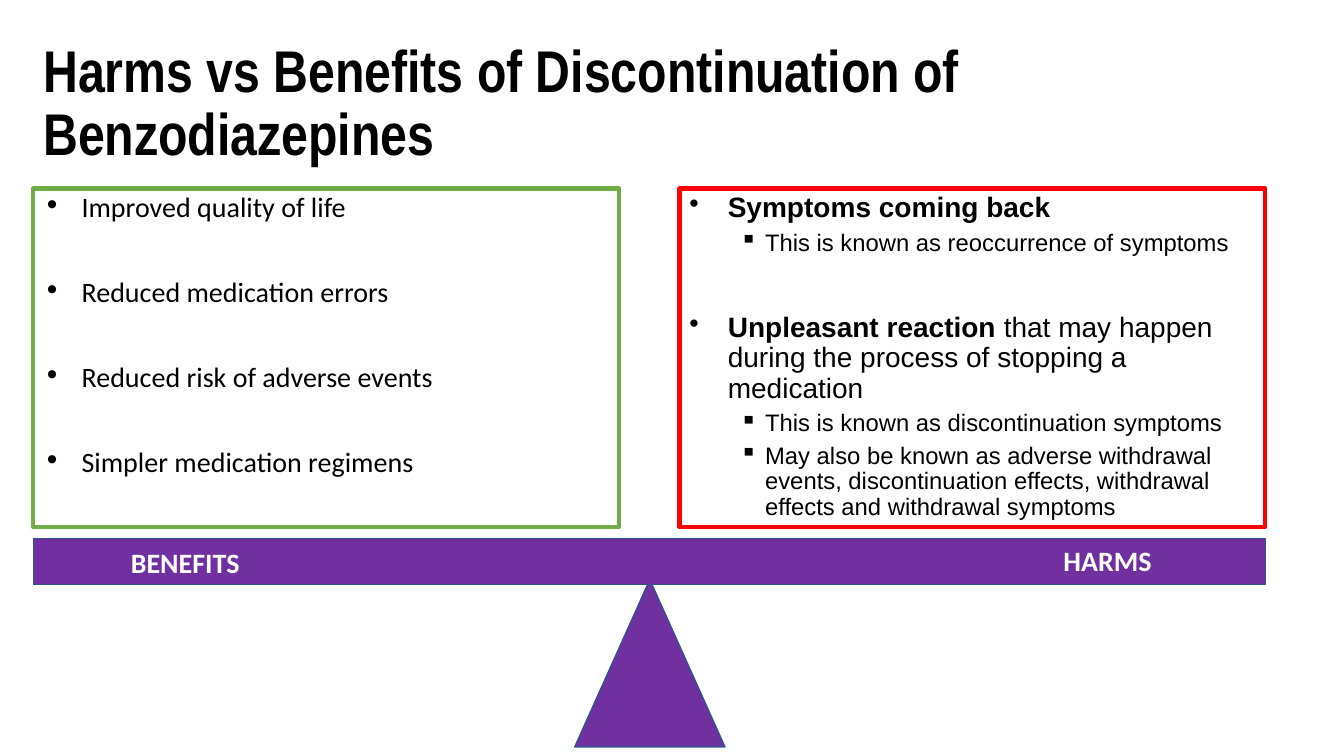
import dataclasses
import typing

import lxml.etree
import pptx
import pptx.dml.color
import pptx.enum.shapes
import pptx.enum.text
import pptx.oxml.ns
import pptx.util

COLOURS = {
    "text": "000000",
    "paper": "FFFFFF",
    "benefits": "70AD47",
    "harms": "FF0000",
    "scale": "7030A0",
    "scale_edge": "31538F",
}
SHAPES = pptx.enum.shapes.MSO_SHAPE
SLIDE_WIDTH = pptx.util.Inches(13.33)
SLIDE_HEIGHT = pptx.util.Inches(7.5)

# Lengths are percentages of the slide's width and height
LEFT = 2.48
PANEL_TOP, PANEL_WIDTH, PANEL_HEIGHT = 24.93, 43.59, 44.8
BEAM_TOP, BEAM_WIDTH, BEAM_HEIGHT = 71.2, 91.67, 6.13


@dataclasses.dataclass
class Area:
    left: float
    top: float
    width: float
    height: float

    def lengths(self) -> tuple[int, int, int, int]:
        return (
            round(SLIDE_WIDTH * self.left / 100),
            round(SLIDE_HEIGHT * self.top / 100),
            round(SLIDE_WIDTH * self.width / 100),
            round(SLIDE_HEIGHT * self.height / 100),
        )


@dataclasses.dataclass
class Style:
    font: str
    size: float
    colour: str = "text"
    bold: bool = False


@dataclasses.dataclass
class Level:
    bullet: str
    indent: float
    hanging: float
    size: float


@dataclasses.dataclass
class Item:
    text: str
    level: Level
    space_before: float = 0
    bold_lead: str = ""


@dataclasses.dataclass
class Panel:
    left: float
    edge: str
    font: str
    items: list[Item]


@dataclasses.dataclass
class Label:
    text: str
    area: Area
    style: Style
    line_spacing: float = 1.0


BENEFIT = Level("∙", 0.38, 0.38, 20)
HARM = Level("•", 0.38, 0.38, 20)
DETAIL = Level("▪", 0.75, 0.25, 17)

BENEFITS = [
    "Improved quality of life",
    "Reduced medication errors",
    "Reduced risk of adverse events",
    "Simpler medication regimens",
]
PANELS = [
    Panel(100 - LEFT - 46.96, "harms", "Arial", [
        Item("", HARM, bold_lead="Symptoms coming back"),
        Item("This is known as reoccurrence of symptoms", DETAIL, 5),
        Item("that may happen during the process of stopping a medication",
             HARM, 40.7, "Unpleasant reaction "),
        Item("This is known as discontinuation symptoms", DETAIL, 5),
        Item("May also be known as adverse withdrawal events, discontinuation "
             "effects, withdrawal effects and withdrawal symptoms", DETAIL, 5),
    ]),
    Panel(LEFT, "benefits", "Calibri", [
        Item(text, BENEFIT, 39 if number else 0)
        for number, text in enumerate(BENEFITS)
    ]),
]

LABEL_STYLE = Style("Calibri", 20, "paper", True)
TITLE = Label("Harms vs Benefits of Discontinuation of Benzodiazepines",
              Area(LEFT, 4.8, 70.52, 20.93),
              Style("Arial Narrow", 42, bold=True), 0.9)
SCALE_LABELS = [
    Label("BENEFITS", Area(9, 71.47, 12.6, 5.87), LABEL_STYLE),
    Label("HARMS", Area(78.39, BEAM_TOP, 12.6, 5.87), LABEL_STYLE),
]


def rgb(name: str) -> pptx.dml.color.RGBColor:
    return pptx.dml.color.RGBColor.from_string(COLOURS[name])


def style_font(font: typing.Any, style: Style) -> None:
    font.name = style.font
    font.size = pptx.util.Pt(style.size)
    font.bold = style.bold
    font.color.rgb = rgb(style.colour)


def add_block(slide: typing.Any, kind: typing.Any, area: Area,
              fill: str, edge: str, edge_width: float) -> typing.Any:
    shape = slide.shapes.add_shape(kind, *area.lengths())
    shape.shadow.inherit = False
    shape.fill.solid()
    shape.fill.fore_color.rgb = rgb(fill)
    shape.line.color.rgb = rgb(edge)
    shape.line.width = pptx.util.Pt(edge_width)
    return shape


def add_label(slide: typing.Any, label: Label) -> None:
    box = slide.shapes.add_textbox(*label.area.lengths())
    box.text_frame.word_wrap = True
    box.text_frame.text = label.text
    paragraph = box.text_frame.paragraphs[0]
    paragraph.line_spacing = label.line_spacing
    style_font(paragraph.runs[0].font, label.style)


def set_bullet(paragraph: typing.Any, level: Level) -> None:
    properties = paragraph._p.get_or_add_pPr()
    properties.set("marL", str(pptx.util.Inches(level.indent)))
    properties.set("indent", str(-pptx.util.Inches(level.hanging)))
    bullet = lxml.etree.SubElement(properties, pptx.oxml.ns.qn("a:buChar"))
    bullet.set("char", level.bullet)


def add_panel(slide: typing.Any, panel: Panel) -> None:
    area = Area(panel.left, PANEL_TOP, PANEL_WIDTH, PANEL_HEIGHT)
    shape = add_block(slide, SHAPES.RECTANGLE, area, "paper", panel.edge, 3)
    frame = shape.text_frame
    frame.word_wrap = True
    frame.vertical_anchor = pptx.enum.text.MSO_ANCHOR.TOP
    for number, item in enumerate(panel.items):
        paragraph = frame.add_paragraph() if number else frame.paragraphs[0]
        set_bullet(paragraph, item.level)
        paragraph.level = 1 if item.level is DETAIL else 0
        paragraph.alignment = pptx.enum.text.PP_ALIGN.LEFT
        paragraph.line_spacing = 0.9
        paragraph.space_before = pptx.util.Pt(item.space_before)
        paragraph.text = item.bold_lead or item.text
        if item.bold_lead and item.text:
            paragraph.add_run().text = item.text
        for position, run in enumerate(paragraph.runs):
            bold = bool(item.bold_lead) and position == 0
            style_font(run.font, Style(panel.font, item.level.size, bold=bold))


def main() -> None:
    presentation = pptx.Presentation()
    presentation.slide_width = SLIDE_WIDTH
    presentation.slide_height = SLIDE_HEIGHT
    slide = presentation.slides.add_slide(presentation.slide_layouts[6])

    # Title and the two lists
    add_label(slide, TITLE)
    for panel in PANELS:
        add_panel(slide, panel)

    # Balance scale: pivot, beam and labels
    add_block(slide, SHAPES.FLOWCHART_EXTRACT, Area(42.76, 76.67, 11.18, 22.13),
              "scale", "scale_edge", 1)
    add_block(slide, SHAPES.RECTANGLE,
              Area(LEFT, BEAM_TOP, BEAM_WIDTH, BEAM_HEIGHT),
              "scale", "scale_edge", 1)
    for label in SCALE_LABELS:
        add_label(slide, label)

    presentation.save("out.pptx")


if __name__ == "__main__":
    main()
